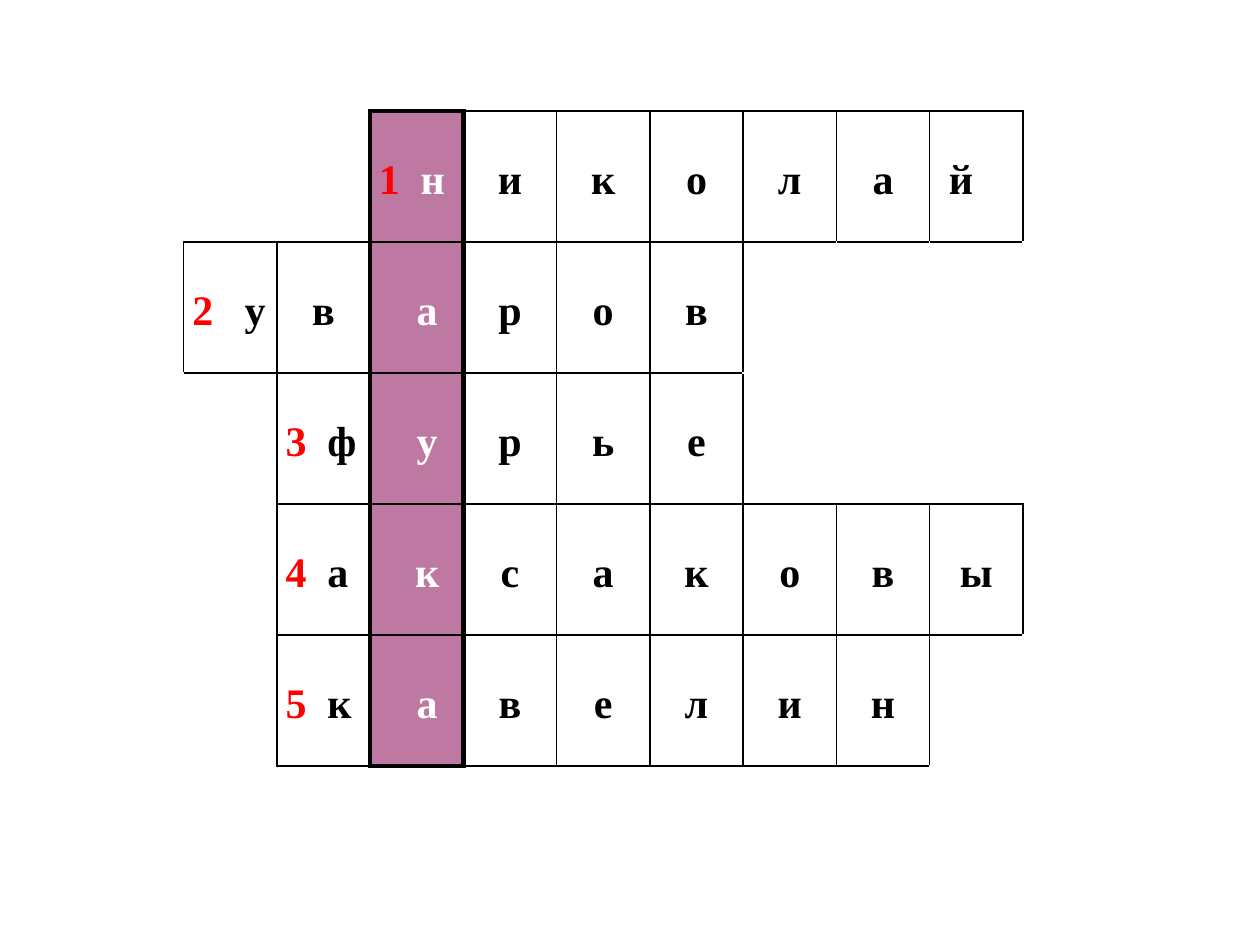
from pptx import Presentation
from pptx.dml.color import RGBColor
from pptx.enum.text import MSO_ANCHOR, PP_ALIGN
from pptx.oxml.ns import qn
from pptx.util import Cm, Pt
from lxml.etree import SubElement

ROWS, COLS, KEY_COL = 5, 10, 2
COL_W, ROW_H = 1.88, 2.64
SPACE = 0.21  # width of one space at 24 pt, in cm
INK, PAPER, RED, PLUM = "000000", "FFFFFF", "FF0000", "BE79A3"

# Start column, word, distance from number to letter in cm
WORDS = [
    (2, "николай", 4 * SPACE),
    (0, "уваров", 5 * SPACE),
    (1, "фурье", 4 * SPACE),
    (1, "аксаковы", 4 * SPACE),
    (1, "кавелин", 4 * SPACE),
]


def rgb(value):
    return RGBColor.from_string(value)


def has_letter(row, col):
    if not 0 <= row < ROWS:
        return False
    start, word, _ = WORDS[row]
    return start <= col < start + len(word)


class Crossword:
    font = "Times New Roman"
    size = Pt(24)

    def __init__(self, prs):
        self.s = prs.slides.add_slide(prs.slide_layouts[6])

    def run(self, p, text, color):
        r = p.add_run()
        r.text = text
        r.font.name, r.font.size, r.font.bold = self.font, self.size, True
        r.font.color.rgb = rgb(color)

    def border(self, cell, side, color, width):
        ln = SubElement(cell._tc.get_or_add_tcPr(), qn(f"a:ln{side}"),
                        w=str(Pt(width)))
        fill = SubElement(ln, qn("a:solidFill"))
        SubElement(fill, qn("a:srgbClr"), val=color)

    def borders(self, cell, row, col):
        here = has_letter(row, col)
        sides = {"L": (row, col - 1), "R": (row, col + 1),
                 "T": (row - 1, col), "B": (row + 1, col)}
        for side, (r, c) in sides.items():
            across = side in "LR"
            thick = (across and KEY_COL in (col, c) and (here or has_letter(r, c))
                     or not across and col == KEY_COL and not 0 <= r < ROWS)
            color = INK if here or has_letter(r, c) else PAPER
            self.border(cell, side, color, 3 if thick else 0.96)

    def letter(self, cell, row, col):
        start, word, gap = WORDS[row]
        in_key = col == KEY_COL
        cell.vertical_anchor = MSO_ANCHOR.MIDDLE
        cell.margin_left = cell.margin_right = Cm(0.18)
        cell.margin_top = cell.margin_bottom = Cm(0.13)
        p = cell.text_frame.paragraphs[0]
        p.line_spacing = 1.15
        if col == start:
            p.alignment = PP_ALIGN.LEFT
            tabs = SubElement(p._p.get_or_add_pPr(), qn("a:tabLst"))
            SubElement(tabs, qn("a:tab"), pos=str(Cm(gap)), algn="l")
            self.run(p, f"{row + 1}\t", RED)
        elif word[col - start] == "й":
            p.alignment = PP_ALIGN.LEFT
            cell.margin_left = Cm(0.18 + SPACE)
        else:
            p.alignment = PP_ALIGN.CENTER
            if in_key:
                cell.margin_left = Cm(0.18 + 2 * SPACE)
        self.run(p, word[col - start], PAPER if in_key else INK)

    def grid(self, left, top):
        tbl = self.s.shapes.add_table(
            ROWS, COLS, Cm(left), Cm(top),
            Cm(COLS * COL_W), Cm(ROWS * ROW_H)).table
        tbl.first_row = tbl.horz_banding = False
        for column in tbl.columns:
            column.width = Cm(COL_W)
        for row in range(ROWS):
            tbl.rows[row].height = Cm(ROW_H)
            for col in range(COLS):
                cell = tbl.cell(row, col)
                self.borders(cell, row, col)
                if col == KEY_COL:
                    cell.fill.solid()
                    cell.fill.fore_color.rgb = rgb(PLUM)
                else:
                    cell.fill.background()
                if has_letter(row, col):
                    self.letter(cell, row, col)


def main():
    prs = Presentation()
    prs.slide_width, prs.slide_height = Cm(25.4), Cm(19.05)

    # Crossword with the key word in the plum column
    Crossword(prs).grid(3.7, 2.24)

    prs.save("out.pptx")


if __name__ == "__main__":
    main()
